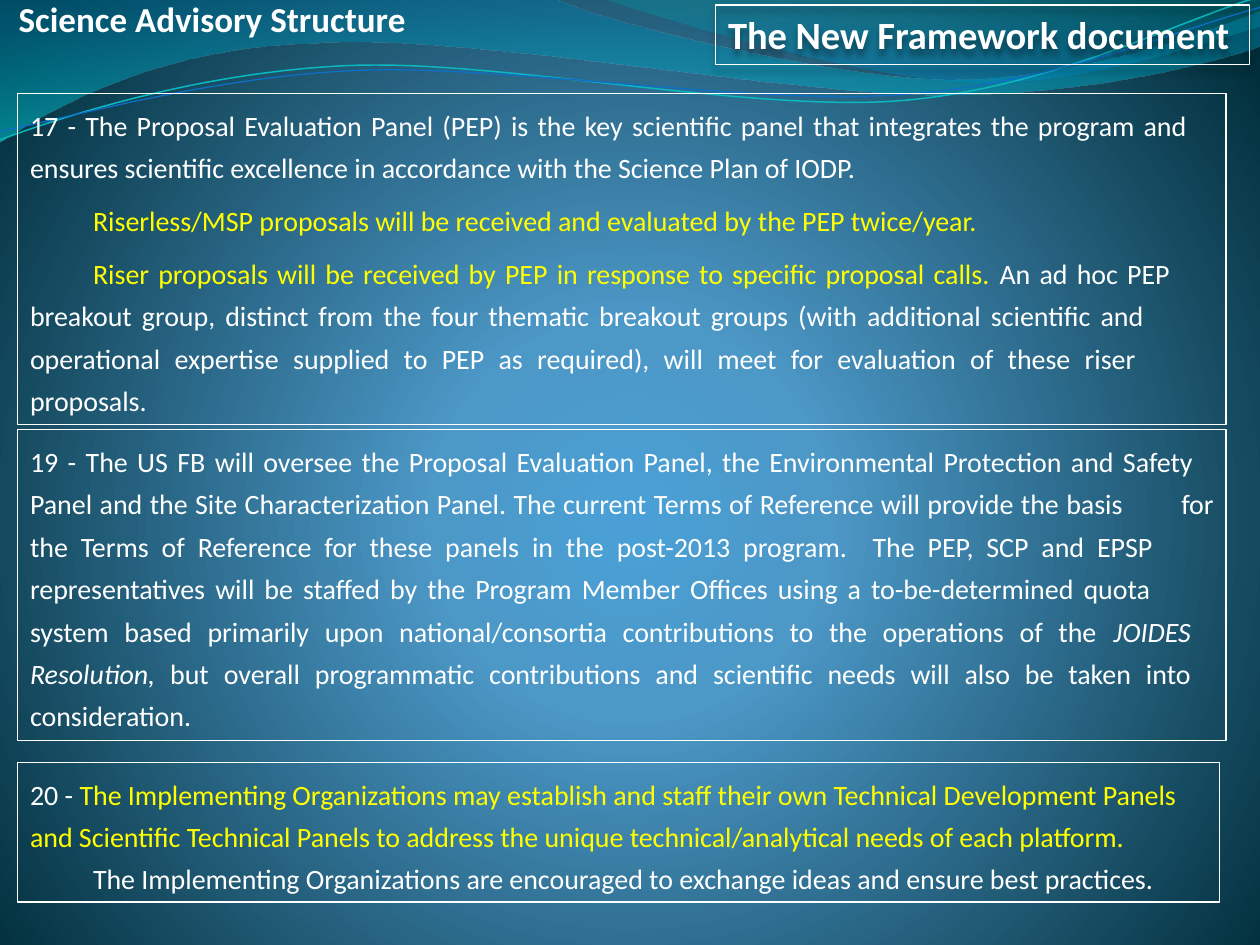
import math

import pptx
import pptx.dml.color
import pptx.enum.shapes
import pptx.enum.text
import pptx.oxml
import pptx.oxml.ns
import pptx.util

COLORS = {
    "white": "FFFFFF", "yellow": "FFFF00", "black": "000000",
    "center": "4AA0D6", "middle": "4C98C7", "edge": "002C38",
    "wave blue": "0074A1", "wave cyan": "00C6CF",
    "wave teal": "00A1A9", "wave azure": "008BBF",
    "cyan line": "0AB8BF", "blue line": "0F6FC6",
}
NAMESPACE = pptx.oxml.ns.nsdecls("a")

presentation = pptx.Presentation()
presentation.slide_width = pptx.util.Inches(10)
presentation.slide_height = pptx.util.Inches(7.5)
slide = presentation.slides.add_slide(presentation.slide_layouts[6])
column = presentation.slide_width / 10
row = presentation.slide_height / 7.5


def set_gradient(properties, old_tag, stops, direction):
    """Replace a plain fill by a gradient of (position, color, opacity) percentages."""
    marks = ""
    for position, color, opacity in stops:
        alpha = f'<a:alpha val="{opacity * 1000}"/>' if opacity < 100 else ""
        marks += (f'<a:gs pos="{position * 1000}"><a:srgbClr val="{COLORS[color]}">'
                  f'{alpha}</a:srgbClr></a:gs>')
    properties.replace(properties.find(pptx.oxml.ns.qn(old_tag)), pptx.oxml.parse_xml(
        f'<a:gradFill {NAMESPACE} rotWithShape="1"><a:gsLst>{marks}</a:gsLst>'
        f"{direction}</a:gradFill>"))


def add_curve(start, segments, closed):
    """Draw a freeform of lines (2 numbers) and cubic curves (6 numbers)."""
    points = [pair for segment in segments for pair in zip(segment[::2], segment[1::2])]
    builder = slide.shapes.build_freeform(round(start[0] * column), round(start[1] * row))
    builder.add_line_segments([(round(x * column), round(y * row)) for x, y in points],
                              close=closed)
    shape = builder.convert_to_shape()
    shape.shadow.inherit = False
    lines = iter(list(shape._element.spPr.iter(pptx.oxml.ns.qn("a:lnTo"))))
    for segment in segments:
        line = next(lines)
        if len(segment) == 6:
            cubic = pptx.oxml.parse_xml(f"<a:cubicBezTo {NAMESPACE}/>")
            line.addprevious(cubic)
            for part in (line, next(lines), next(lines)):
                cubic.append(part[0])
                part.getparent().remove(part)
    return shape


# Background
slide.background.fill.solid()
set_gradient(slide.background._cSld.bg.bgPr, "a:solidFill",
             [(0, "center", 100), (25, "middle", 100), (100, "edge", 100)],
             '<a:path path="circle"><a:fillToRect l="10000" t="110000" r="10000" b="100000"/>'
             "</a:path>")

# Waves along the top
waves = [
    ((0, 0), [(4.4, -0.01), (4.76, 0.17, 6.64, 0.63, 7.58, 0.63),
              (8.53, 0.63, 9.58, 0.26, 10, 0.09), (10.01, 0.36),
              (9.83, 0.44, 8.7, 0.76, 7.46, 0.75), (6.22, 0.75, 3.82, 0.28, 2.57, 0.34),
              (1.29, 0.36, 0.46, 0.83, -0.01, 1.13), (0, 0)],
     [(0, "wave blue", 45), (100, "wave cyan", 55)]),
    ((4.79, -0.01), [(5.09, 0.11, 6.82, 0.62, 7.69, 0.65),
                     (8.56, 0.69, 9.61, 0.32, 10, 0.21), (10, 0), (4.79, -0.01)],
     [(0, "wave teal", 30), (80, "wave azure", 45)]),
]
for start, segments, stops in waves:
    wave = add_curve(start, segments, True)
    wave.line.fill.background()
    wave.fill.background()
    set_gradient(wave._element.spPr, "a:noFill", stops, '<a:lin ang="5400000" scaled="0"/>')

# Thin lines over the waves, laid level and then turned about their middle
tilt = -2.7
cosine, sine = math.cos(math.radians(tilt)), math.sin(math.radians(tilt))
wave_lines = [
    ((0, 1.11), [(0.48, 0.93, 1.58, 0.57, 2.77, 0.52), (3.95, 0.47, 5.93, 0.89, 7.13, 0.8),
                 (8.33, 0.71, 9.38, 0.15, 9.98, -0.02)], (4.99, 0.58), "cyan line", 0.85),
    ((0, 1.04), [(0.47, 0.96, 1.64, 0.61, 2.83, 0.56), (4.03, 0.51, 5.97, 0.84, 7.17, 0.75),
                 (8.36, 0.67, 9.41, 0.21, 10, 0.06)], (5, 0.59), "blue line", 0.75),
]
for start, segments, (middle_x, middle_y), color, width in wave_lines:
    level = []
    for segment in [start] + segments:
        offsets = [(x - middle_x, y - middle_y) for x, y in zip(segment[::2], segment[1::2])]
        level.append([number for x, y in offsets for number in
                      (middle_x + x * cosine + y * sine, middle_y - x * sine + y * cosine)])
    curve = add_curve(level[0], level[1:], False)
    curve.rotation = tilt
    curve.fill.background()
    curve.line.color.rgb = pptx.dml.color.RGBColor.from_string(COLORS[color])
    curve.line.width = pptx.util.Pt(width)

# Text: each paragraph is (space before, runs), each run (text, color, italic)
framework = [(0, [("The New Framework document", "white", False)])]
evaluation = [
    (0, [("17 - The Proposal Evaluation Panel (PEP) is the key scientific panel that integrates "
          "the program and \tensures scientific excellence in accordance with the Science Plan "
          "of IODP. ", "white", False)]),
    (6, [("\t", "white", False),
         ("Riserless/MSP proposals will be received and evaluated by the PEP twice/year. ",
          "yellow", False)]),
    (6, [("\t", "white", False),
         ("Riser proposals will be received by PEP in response to specific proposal calls. ",
          "yellow", False),
         ("An ad hoc PEP \tbreakout group, distinct from the four thematic breakout groups (with "
          "additional scientific and \toperational expertise supplied to PEP as required), will "
          "meet for evaluation of these riser \tproposals.  ", "white", False)]),
]
implementing = [
    (0, [("20 - ", "white", False),
         ("The Implementing Organizations may establish and staff their own Technical Development "
          "Panels \tand Scientific Technical Panels to address the unique technical/analytical "
          "needs of each platform.  ", "yellow", False)]),
    (0, [("\tThe Implementing Organizations are encouraged to exchange ideas and ensure best "
          "practices. ", "white", False)]),
]
structure = [(0, [("Science Advisory Structure", "white", False)])]
oversight = [
    (0, [("19 - The US FB will oversee the Proposal Evaluation Panel, the Environmental Protection "
          "and Safety \tPanel and the Site Characterization Panel. The current Terms of Reference "
          "will provide the basis \tfor the Terms of Reference for these panels in the post-2013 "
          "program.  The PEP, SCP and EPSP \trepresentatives will be staffed by the Program Member "
          "Offices using a to-be-determined quota \tsystem based primarily upon national/consortia "
          "contributions to the operations of the ", "white", False),
         ("JOIDES \tResolution,", "white", True),
         (" but overall programmatic contributions and scientific needs will also be taken into "
          "\tconsideration. ", "white", False)]),
]

# Box: left, top, width, height, text size, is heading, framed, paragraphs
boxes = [
    (5.68, 0.04, 4.24, 0.47, 22, True, True, framework),
    (0.14, 0.74, 9.59, 2.63, 16, False, True, evaluation),
    (0.14, 6.05, 9.54, 1.11, 16, False, True, implementing),
    (0.05, -0.07, 3.3, 0.44, 20, True, False, structure),
    (0.14, 3.41, 9.59, 2.47, 16, False, True, oversight),
]
for left, top, width, height, size, heading, framed, paragraphs in boxes:
    place = [round(length) for length in (left * column, top * row, width * column, height * row)]
    if framed:
        shape = slide.shapes.add_shape(pptx.enum.shapes.MSO_SHAPE.RECTANGLE, *place)
        shape.shadow.inherit = False
        shape.fill.background()
        shape.line.color.rgb = pptx.dml.color.RGBColor.from_string(COLORS["white"])
        shape.line.width = pptx.util.Pt(0.75)
    else:
        shape = slide.shapes.add_textbox(*place)
    if framed and heading:
        effects = shape._element.spPr.find(pptx.oxml.ns.qn("a:effectLst"))
        effects.append(pptx.oxml.parse_xml(
            f'<a:outerShdw {NAMESPACE} blurRad="{pptx.util.Pt(4)}" dist="{pptx.util.Pt(3)}" '
            f'dir="5400000" rotWithShape="0"><a:srgbClr val="{COLORS["black"]}">'
            '<a:alpha val="40000"/></a:srgbClr></a:outerShdw>'))
    frame = shape.text_frame
    frame.word_wrap = not heading
    frame.auto_size = pptx.enum.text.MSO_AUTO_SIZE.SHAPE_TO_FIT_TEXT
    frame.vertical_anchor = pptx.enum.text.MSO_ANCHOR.TOP
    for index, (space, runs) in enumerate(paragraphs):
        paragraph = frame.add_paragraph() if index else frame.paragraphs[0]
        paragraph.font.name = "Calibri"
        paragraph.font.size = pptx.util.Pt(size)
        paragraph.font.bold = heading
        paragraph.alignment = pptx.enum.text.PP_ALIGN.LEFT
        if not heading:
            paragraph.alignment = pptx.enum.text.PP_ALIGN.JUSTIFY
            paragraph.line_spacing = pptx.util.Pt(24.2)
            paragraph.space_before = pptx.util.Pt(space)
        for text, color, italic in runs:
            run = paragraph.add_run()
            run.text = text
            run.font.italic = italic
            run.font.color.rgb = pptx.dml.color.RGBColor.from_string(COLORS[color])

presentation.save("out.pptx")
